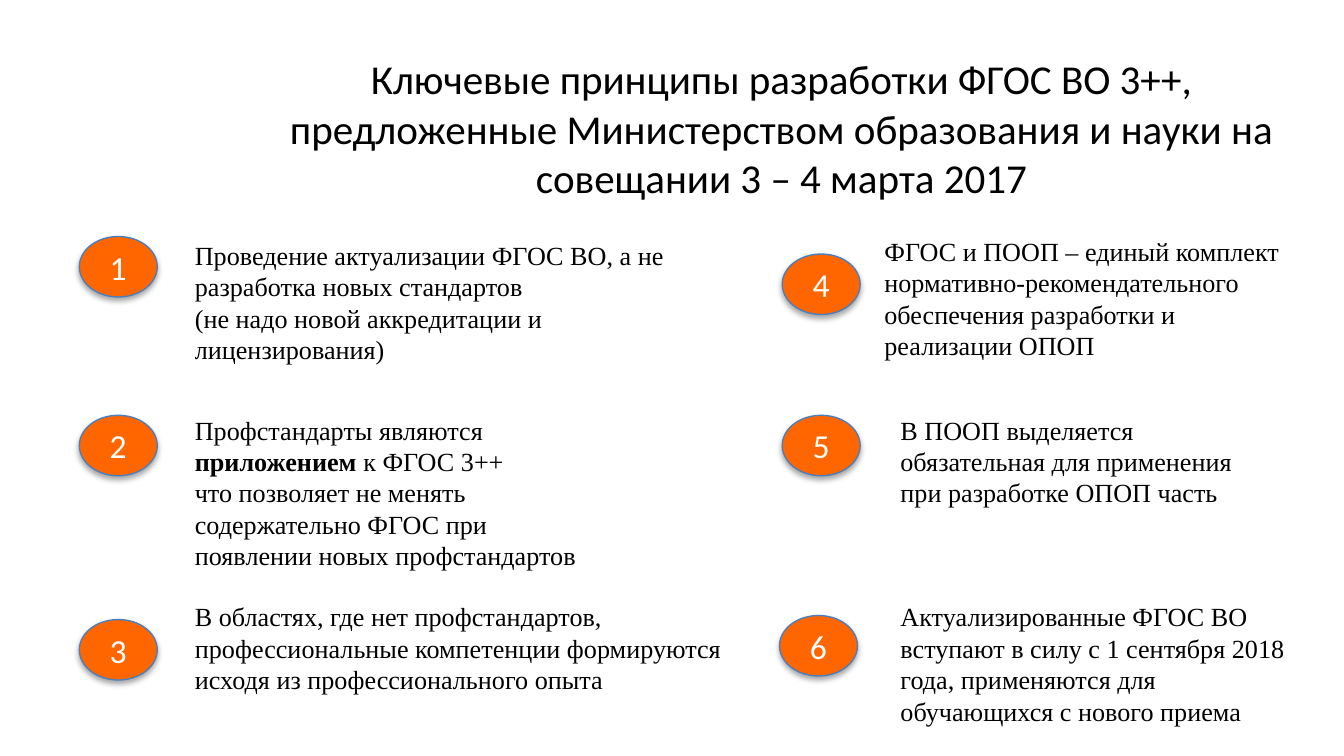
from dataclasses import dataclass

from lxml import etree
from pptx import Presentation
from pptx import util as u
from pptx.dml.color import RGBColor
from pptx.enum import shapes, text
from pptx.oxml import ns


@dataclass(frozen=True)
class Theme:
    """Colours, fonts and type sizes of the slide."""
    ink: str = "000000"
    light: str = "FFFFFF"
    badge: str = "FF6600"
    edge: str = "4B7EBC"
    head: str = "Calibri"
    body: str = "Times New Roman"
    title: int = 22
    label: int = 18
    small: int = 14


THEME = Theme()
BADGE = (0.58, 0.45)
INSET = (0.04, 0.02)

TITLE = ("Ключевые принципы разработки ФГОС ВО 3++, предложенные "
         "Министерством образования и науки на совещании 3 – 4 марта 2017")

LEFT, RIGHT = 0.59, 5.82
ROWS = (1.76, 3.06, 4.45)

ITEMS = [
    ((LEFT, ROWS[0], 4.46, 0.99), (0, 0), 0.82,
     [[("Проведение актуализации ФГОС ВО, а не разработка новых стандартов", False)],
      [("(не надо новой аккредитации и лицензирования)", False)]]),
    ((LEFT, ROWS[1], 3.92, 1.22), (0, 0.03), 0.82,
     [[("Профстандарты являются ", False), ("приложением ", True),
       ("к ФГОС 3++", False)],
      [("что позволяет не менять содержательно ФГОС при появлении новых "
        "профстандартов", False)]]),
    ((LEFT, ROWS[2], 5.21, 0.75), (0, 0.16), 0.82,
     [[("В областях, где нет профстандартов, профессиональные компетенции "
        "формируются исходя из профессионального опыта", False)]]),
    ((RIGHT, 1.73, 3.91, 0.99), (0, 0.16), 0.72,
     [[("ФГОС и ПООП – единый комплект нормативно-рекомендательного "
        "обеспечения разработки и реализации ОПОП", False)]]),
    ((RIGHT, ROWS[1], 3.5, 0.75), (0, 0.03), 0.84,
     [[("В ПООП выделяется обязательная для применения при разработке "
        "ОПОП часть", False)]]),
    ((RIGHT, ROWS[2], 3.79, 0.99), (-0.02, 0.13), 0.84,
     [[("Актуализированные ФГОС ВО вступают в силу с 1 сентября 2018 года, "
        "применяются для обучающихся с нового приема", False)]]),
]


def inches(*vals):
    """Turn numbers into lengths."""
    return [u.Inches(v) for v in vals]


def add_run(para, words, font, size, color, bold=False):
    """Add one styled run to a paragraph."""
    run = para.add_run()
    run.text = words
    run.font.name = font
    run.font.size = u.Pt(size)
    run.font.bold = bold
    run.font.color.rgb = RGBColor.from_string(color)


def set_frame(frame, inset=INSET, anchor=text.MSO_ANCHOR.TOP):
    """Set wrapping, margins and anchor of a text frame."""
    frame.word_wrap = True
    frame.margin_left = frame.margin_right = u.Inches(inset[0])
    frame.margin_top = frame.margin_bottom = u.Inches(inset[1])
    frame.vertical_anchor = anchor


def add_shadow(shape):
    """Give a shape a soft shadow below it."""
    shape.shadow.inherit = False
    effects = shape.element.spPr.find(ns.qn("a:effectLst"))
    outer = etree.SubElement(
        effects, ns.qn("a:outerShdw"), blurRad=str(u.Pt(3.1)),
        dist=str(u.Pt(1.8)), dir="5400000", rotWithShape="0")
    color = etree.SubElement(outer, ns.qn("a:srgbClr"), val=THEME.ink)
    etree.SubElement(color, ns.qn("a:alpha"), val="35000")


def add_title(slide, box):
    """Place the centred heading in its box."""
    frame = slide.shapes.add_textbox(*inches(*box)).text_frame
    set_frame(frame, (0.1, 0.05), text.MSO_ANCHOR.MIDDLE)
    para = frame.paragraphs[0]
    para.alignment = text.PP_ALIGN.CENTER
    add_run(para, TITLE, THEME.head, THEME.title, THEME.ink)


def add_badge(slide, left, top, number):
    """Place a numbered oval."""
    oval = slide.shapes.add_shape(
        shapes.MSO_SHAPE.OVAL, *inches(left, top, *BADGE))
    oval.fill.solid()
    oval.fill.fore_color.rgb = RGBColor.from_string(THEME.badge)
    oval.line.color.rgb = RGBColor.from_string(THEME.edge)
    oval.line.width = u.Pt(0.75)
    add_shadow(oval)
    set_frame(oval.text_frame, anchor=text.MSO_ANCHOR.MIDDLE)
    para = oval.text_frame.paragraphs[0]
    para.alignment = text.PP_ALIGN.CENTER
    add_run(para, str(number), THEME.head, THEME.label, THEME.light)


def add_item(slide, box, shift, indent, number, paras):
    """Place a badge and its principle inside a box."""
    left, top, width, height = box
    add_badge(slide, left + shift[0], top + shift[1], number)
    frame = slide.shapes.add_textbox(
        *inches(left + indent, top, width - indent, height)).text_frame
    set_frame(frame)
    frame.auto_size = text.MSO_AUTO_SIZE.SHAPE_TO_FIT_TEXT
    for index, runs in enumerate(paras):
        para = frame.add_paragraph() if index else frame.paragraphs[0]
        for words, bold in runs:
            add_run(para, words, THEME.body, THEME.small, THEME.ink, bold)


def main():
    """Build and save the slide."""
    deck = Presentation()
    deck.slide_width = u.Inches(10)
    deck.slide_height = u.Inches(10 * 9 / 16)
    slide = deck.slides.add_slide(deck.slide_layouts[6])
    add_title(slide, (1.88, 0.66, 7.87, 0.58))
    for number, (box, shift, indent, paras) in enumerate(ITEMS, 1):
        add_item(slide, box, shift, indent, number, paras)
    deck.save("out.pptx")


if __name__ == "__main__":
    main()
